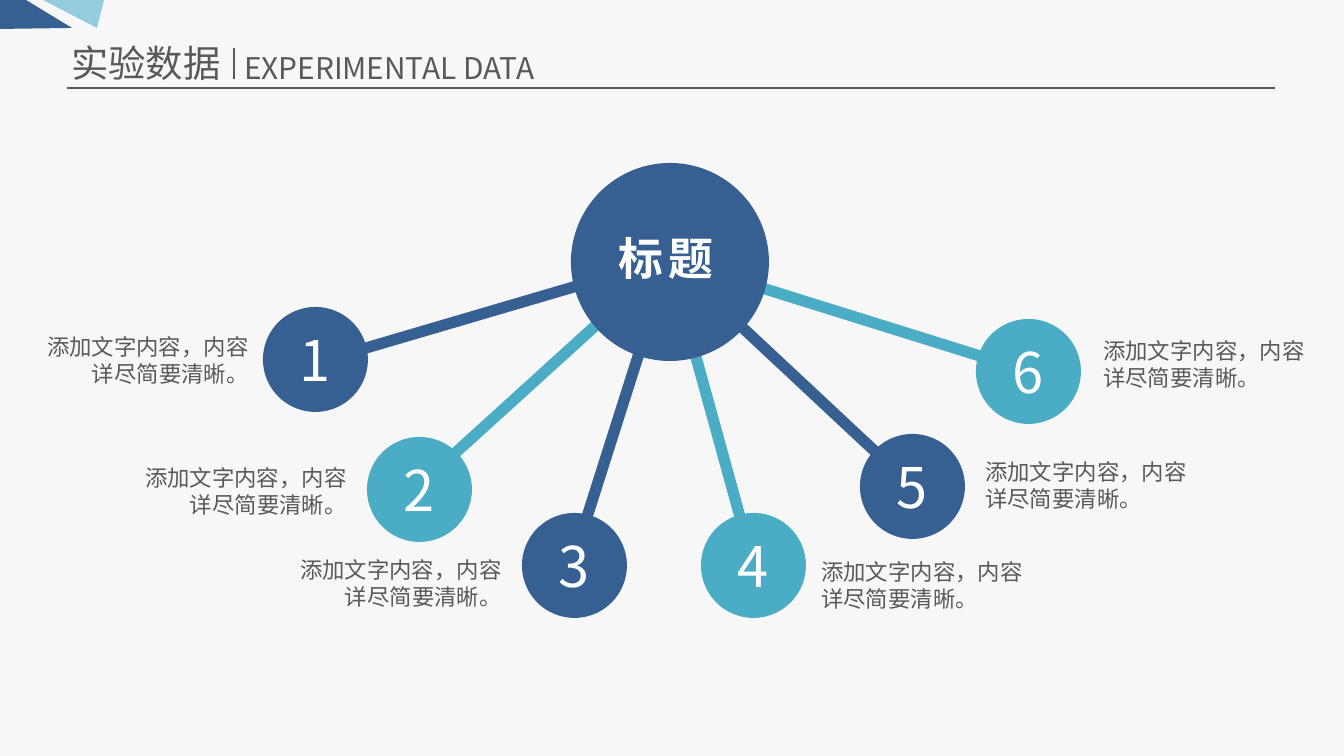
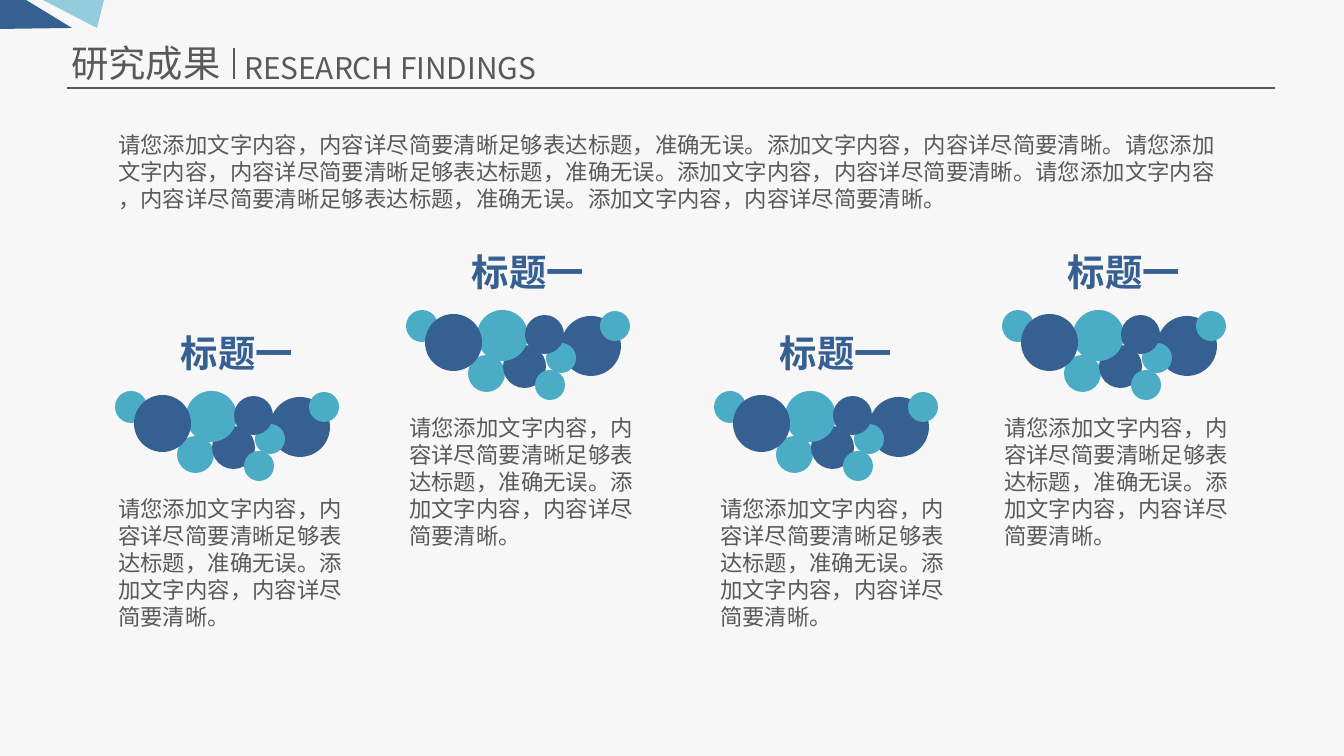
from lxml.etree import SubElement
from pptx import Presentation
from pptx.dml.color import RGBColor
from pptx.enum.shapes import MSO_CONNECTOR, MSO_SHAPE
from pptx.enum.text import MSO_ANCHOR, MSO_AUTO_SIZE, PP_ALIGN
from pptx.oxml.ns import qn
from pptx.util import Pt

EMU_PER_PX = 914400 / 134.4
FONT = "Noto Sans CJK SC"
NAVY, TEAL, PALE_TEAL = "376092", "4BACC6", "93CDDD"
GREY, WHITE, PAPER = "595959", "FFFFFF", "F7F7F7"

# Text formats
BODY = {"size": Pt(12), "color": GREY}
TITLE = {"size": Pt(20), "color": GREY}
SUBTITLE = {"size": Pt(16), "color": GREY}
HEADING = {"size": Pt(20), "color": NAVY, "bold": True}
HUB = {"size": Pt(24), "color": WHITE, "bold": True}
NUMBER = {"size": Pt(30), "color": WHITE}

# Spoke nodes: left, top, spoke end y, label left, label top
NODE_SIZE = 105
NODES = [
    (263, 307, 363, 31, 327),
    (367, 437, 486, 129, 458),
    (522, 513, 558, 284, 550),
    (701, 513, 564, 808, 552),
    (860, 434, 486, 972, 452),
    (976, 319, 371, 1090, 331),
]
NODE_LABEL = ["添加文字内容，内容", "详尽简要清晰。"]

# Bubbles inside a cluster: left, top, size, colour, has a ring
BUBBLES = [
    (155, 6, 60, NAVY, True),
    (0, 0, 32, TEAL, True),
    (62, 45, 37, TEAL, True),
    (194, 1, 30, TEAL, False),
    (140, 33, 30, TEAL, False),
    (97, 35, 43, NAVY, True),
    (129, 60, 30, TEAL, False),
    (71, 0, 51, TEAL, True),
    (119, 5, 39, NAVY, False),
    (19, 4, 57, NAVY, True),
]
# Columns: cluster left, cluster top, body left
COLUMNS = [(115, 391, 105), (406, 310, 396), (714, 391, 707), (1002, 310, 991)]
COLUMN_TEXT = "请您添加文字内容，内容详尽简要清晰足够表达标题，准确无误。添加文字内容，内容详尽简要清晰。"
INTRODUCTION = [
    "请您添加文字内容，内容详尽简要清晰足够表达标题，准确无误。添加文字内容，内容详尽简要清晰。请您添加",
    "文字内容，内容详尽简要清晰足够表达标题，准确无误。添加文字内容，内容详尽简要清晰。请您添加文字内容",
    "，内容详尽简要清晰足够表达标题，准确无误。添加文字内容，内容详尽简要清晰。",
]


def px(*lengths):
    return [round(length * EMU_PER_PX) for length in lengths]


def rgb(value):
    return RGBColor.from_string(value)


def write(paragraph, text, style, align, spacing=None):
    paragraph.alignment = align
    run = paragraph.add_run()
    run.text = text
    for name, value in style.items():
        if name == "color":
            run.font.color.rgb = rgb(value)
        else:
            setattr(run.font, name, value)
    run.font.name = FONT
    properties = run.font._element
    SubElement(properties, qn("a:ea")).set("typeface", FONT)
    if spacing:
        properties.set("spc", str(spacing))


def add_text(slide, box, lines, style, align=PP_ALIGN.LEFT, wrap=False, spacing=None):
    frame = slide.shapes.add_textbox(*px(*box)).text_frame
    frame.word_wrap = wrap
    frame.auto_size = MSO_AUTO_SIZE.SHAPE_TO_FIT_TEXT
    for index, line in enumerate(lines):
        paragraph = frame.add_paragraph() if index else frame.paragraphs[0]
        write(paragraph, line, style, align, spacing)


def paint(shape, color):
    shape.shadow.inherit = False
    shape.fill.solid()
    shape.fill.fore_color.rgb = rgb(color)
    shape.line.fill.background()


def add_circle(shapes, left, top, size, color, kind=MSO_SHAPE.OVAL):
    circle = shapes.add_shape(kind, *px(left, top, size, size))
    paint(circle, color)
    return circle


def add_line(slide, start, end, color, width):
    line = slide.shapes.add_connector(MSO_CONNECTOR.STRAIGHT, *px(*start, *end))
    line.line.color.rgb = rgb(color)
    line.line.width = Pt(width)
    SubElement(line._element.spPr, qn("a:effectLst"))


def add_polygon(slide, points, color):
    corners = [px(*point) for point in points]
    builder = slide.shapes.build_freeform(*corners[0])
    builder.add_line_segments(corners[1:], close=True)
    paint(builder.convert_to_shape(), color)


def add_base_slide(presentation, title, subtitle):
    slide = presentation.slides.add_slide(presentation.slide_layouts[6])
    slide.background.fill.solid()
    slide.background.fill.fore_color.rgb = rgb(PAPER)
    # Corner decoration and header
    add_line(slide, (67, 88), (1275, 88), GREY, 0.75)
    add_polygon(slide, [(43, 0), (97, 28), (104, 0)], PALE_TEAL)
    add_polygon(slide, [(72, 28), (26, 0), (0, 0), (0, 29)], NAVY)
    add_text(slide, (58, 34, 177, 59), [title], TITLE)
    add_text(slide, (231, 43, 335, 50), [subtitle], SUBTITLE)
    add_line(slide, (234, 48), (234, 79), GREY, 1.5)
    return slide


def add_node(slide, number, left, top, color):
    circle = add_circle(slide.shapes, left, top, NODE_SIZE, color)
    frame = circle.text_frame
    frame.vertical_anchor = MSO_ANCHOR.MIDDLE
    write(frame.paragraphs[0], str(number), NUMBER, PP_ALIGN.CENTER)


def add_cluster(slide, left, top):
    shapes = slide.shapes.add_group_shape().shapes
    for x, y, size, color, ringed in BUBBLES:
        x, y = left + x, top + y
        if ringed:
            ring = add_circle(shapes, x, y, size, color, MSO_SHAPE.DONUT)
            ring.adjustments[0] = 0.05
            x, y, size = x + 1, y + 1, size - 2
        add_circle(shapes, x, y, size, color)


def build_data_slide(presentation):
    slide = add_base_slide(presentation, "实验数据", "EXPERIMENTAL DATA")
    colors = [NAVY, TEAL] * 3
    # Spokes lie behind the circles
    for (left, _, end_y, _, _), color in zip(NODES, colors):
        add_line(slide, (left + NODE_SIZE // 2, end_y), (669, 259), color, 6)
    for number, (node, color) in enumerate(zip(NODES, colors), 1):
        left, top, _, label_left, label_top = node
        add_node(slide, number, left, top, color)
        align = PP_ALIGN.RIGHT if label_left < left else PP_ALIGN.LEFT
        add_text(slide, (label_left, label_top, 231, 67), NODE_LABEL, BODY, align)
    # Hub
    add_circle(slide.shapes, 571, 163, 198, NAVY)
    add_text(slide, (605, 224, 129, 67), ["标题"], HUB, spacing=300)


def build_findings_slide(presentation):
    slide = add_base_slide(presentation, "研究成果", "RESEARCH FINDINGS")
    add_text(slide, (105, 125, 1136, 95), INTRODUCTION, BODY)
    # Four staggered columns
    for left, top, body_left in COLUMNS:
        add_text(slide, (left + 52, top - 67, 140, 59), ["标题一"], HEADING, PP_ALIGN.CENTER)
        add_cluster(slide, left, top)
        add_text(slide, (body_left, top + 98, 258, 149), [COLUMN_TEXT], BODY, wrap=True)


def main():
    presentation = Presentation()
    presentation.slide_width, presentation.slide_height = px(1344, 756)
    build_data_slide(presentation)
    build_findings_slide(presentation)
    presentation.save("out.pptx")


if __name__ == "__main__":
    main()
